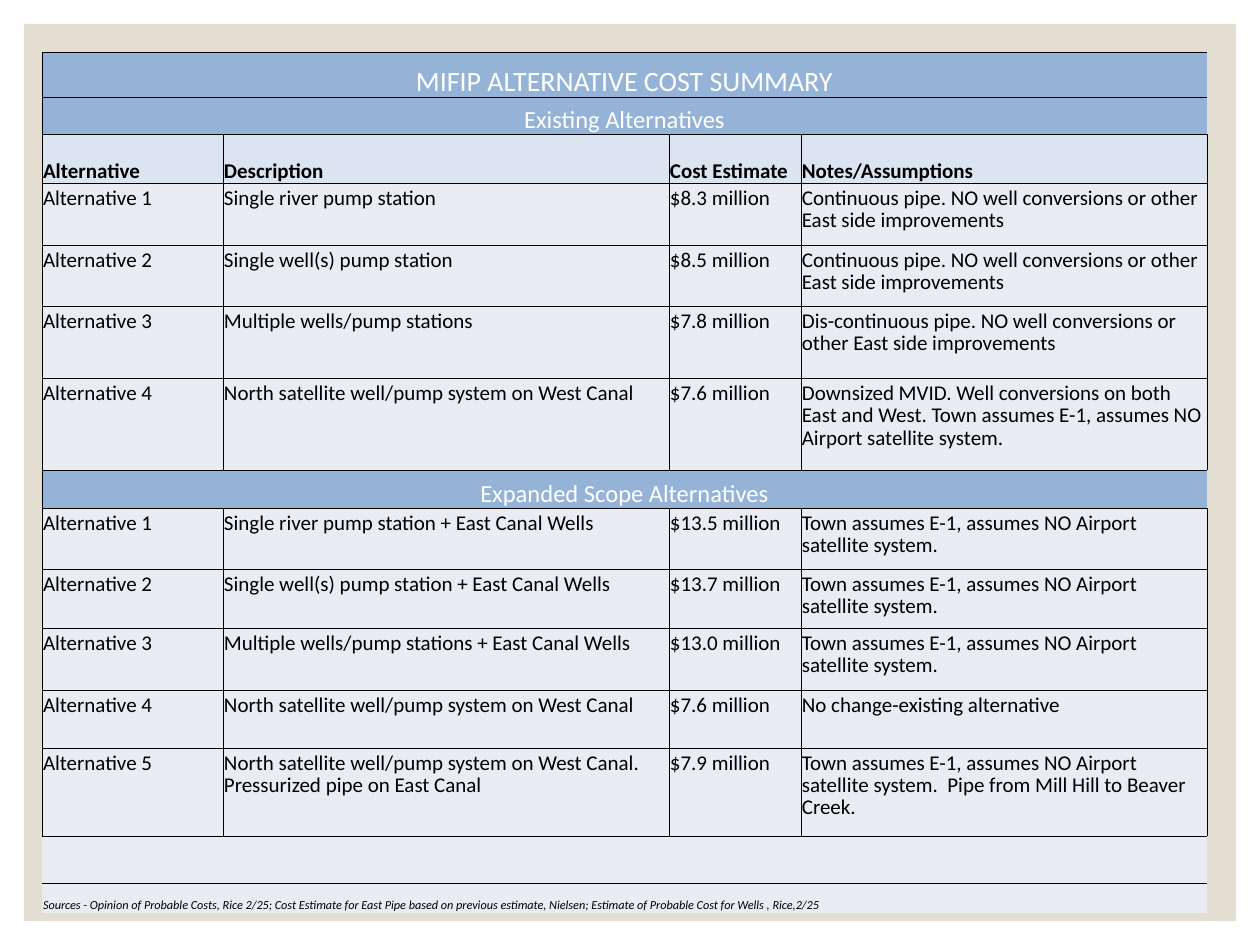
"""Build the alternative cost summary slide."""
from dataclasses import dataclass

from lxml.etree import SubElement
from pptx import Presentation
from pptx.dml.color import RGBColor
from pptx.enum.shapes import MSO_SHAPE as Shape
from pptx.enum.text import MSO_ANCHOR as Anchor, PP_ALIGN as Align
from pptx.oxml.ns import qn
from pptx.util import Inches, Pt

SCALE = Inches(10) / 1260
PLAIN_TABLE = "{2D5ABB26-0587-4C30-8999-92F81FD0307C}"
COLUMNS = [181, 446, 132, 406]


@dataclass
class Row:
    """Format shared by the cells of one table row."""
    fill: str = "E9ECF3"
    color: str = "000000"
    size: int = 12
    bold: bool = False
    italic: bool = False
    anchor: Anchor = Anchor.TOP
    align: Align = Align.LEFT
    top: int = 5
    borders: str = "LRTB"
    first: str = "LRTB"
    span: bool = False


TITLE = Row("95B3D7", "FFFFFF", 16, anchor=Anchor.BOTTOM, align=Align.CENTER,
            top=6, borders="T", first="LTB", span=True)
SECTION = Row("95B3D7", "FFFFFF", 14, anchor=Anchor.BOTTOM, align=Align.CENTER,
              borders="T", first="LTB", span=True)
HEADER = Row("DBE5F1", bold=True, anchor=Anchor.BOTTOM, borders="LRB")
BODY = Row()
BELOW_SECTION = Row(borders="LRB")
SPACER = Row(borders="T", first="T")
SOURCE = Row(size=7, italic=True, anchor=Anchor.BOTTOM, top=4,
             borders="", first="", span=True)

CONTINUOUS = "Continuous pipe. NO well conversions or other East side improvements"
TOWN = "Town assumes E-1, assumes NO Airport satellite system."
NORTH = "North satellite well/pump system on West Canal"

COST_ROWS = [
    (45, TITLE, ["MIFIP ALTERNATIVE COST SUMMARY"]),
    (37, SECTION, ["Existing Alternatives"]),
    (49, HEADER, ["Alternative", "Description", "Cost Estimate", "Notes/Assumptions"]),
    (62, BODY, ["Alternative 1", "Single river pump station", "$8.3 million", CONTINUOUS]),
    (61, BODY, ["Alternative 2", "Single well(s) pump station", "$8.5 million", CONTINUOUS]),
    (72, BODY, ["Alternative 3", "Multiple wells/pump stations", "$7.8 million",
                "Dis-continuous pipe. NO well conversions or other East side improvements"]),
    (92, BODY, ["Alternative 4", NORTH, "$7.6 million",
                "Downsized MVID. Well conversions on both East and West. "
                "Town assumes E-1, assumes NO Airport satellite system."]),
    (38, SECTION, ["Expanded Scope Alternatives"]),
    (61, BELOW_SECTION, ["Alternative 1", "Single river pump station + East Canal Wells",
                         "$13.5 million", TOWN]),
    (59, BODY, ["Alternative 2", "Single well(s) pump station + East Canal Wells",
                "$13.7 million", TOWN]),
    (62, BODY, ["Alternative 3", "Multiple wells/pump stations + East Canal Wells",
                "$13.0 million", TOWN]),
    (58, BODY, ["Alternative 4", NORTH, "$7.6 million", "No change-existing alternative"]),
    (88, BODY, ["Alternative 5", NORTH + ". Pressurized pipe on East Canal", "$7.9 million",
                TOWN + "  Pipe from Mill Hill to Beaver Creek."]),
    (47, SPACER, []),
    (30, SOURCE, ["Sources - Opinion of Probable Costs, Rice 2/25; Cost Estimate for East Pipe "
                  "based on previous estimate, Nielsen; Estimate of Probable Cost for Wells , "
                  "Rice,2/25"]),
]


def px(length):
    """Turn px into EMU."""
    return round(length * SCALE)


def rgb(value):
    """Turn a hex string into a colour."""
    return RGBColor.from_string(value)


class Page:
    """Style and current slide, with one method per kind of element."""

    font = "Calibri"
    line_color = "000000"
    line_width = Pt(0.11)
    spacing = 0.87

    def __init__(self, deck):
        """Add a blank slide to the deck."""
        self.slide = deck.slides.add_slide(deck.slide_layouts[6])

    def panel(self, left, top, width, height, color):
        """Draw a plain filled rectangle."""
        box = self.slide.shapes.add_shape(
            Shape.RECTANGLE, px(left), px(top), px(width), px(height))
        box.shadow.inherit = False
        box.fill.solid()
        box.fill.fore_color.rgb = rgb(color)
        box.line.fill.background()

    def table(self, left, top, columns, rows):
        """Draw a table from (height, format, texts) rows."""
        height = sum(row[0] for row in rows)
        table = self.slide.shapes.add_table(
            len(rows), len(columns), px(left), px(top), px(sum(columns)), px(height)).table
        table.first_row = table.horz_banding = False
        table._tbl.tblPr.find(qn("a:tableStyleId")).text = PLAIN_TABLE
        for column, width in zip(table.columns, columns):
            column.width = px(width)
        for index, (height, row, texts) in enumerate(rows):
            table.rows[index].height = px(height)
            if row.span:
                table.cell(index, 0).merge(table.cell(index, len(columns) - 1))
            for number in range(len(columns)):
                text = texts[number] if number < len(texts) else ""
                sides = row.borders if number else row.first
                self.cell(table.cell(index, number), row, text, sides)

    def cell(self, cell, row, text, sides):
        """Fill one cell and set its borders and text format."""
        self.borders(cell, sides)
        cell.fill.solid()
        cell.fill.fore_color.rgb = rgb(row.fill)
        cell.margin_left = cell.margin_right = px(1)
        cell.margin_top, cell.margin_bottom = px(row.top), 0
        cell.vertical_anchor = row.anchor
        para = cell.text_frame.paragraphs[0]
        para.text = text
        para.alignment = row.align
        para.line_spacing = self.spacing
        font = para.font
        font.name, font.size = self.font, Pt(row.size)
        font.bold, font.italic = row.bold, row.italic
        font.color.rgb = rgb(row.color)

    def borders(self, cell, sides):
        """Add a hairline on each named side of a cell."""
        properties = cell._tc.get_or_add_tcPr()
        for side in sides:
            line = SubElement(properties, qn(f"a:ln{side}"), w=str(self.line_width))
            fill = SubElement(line, qn("a:solidFill"))
            SubElement(fill, qn("a:srgbClr"), val=self.line_color)


def main():
    """Build and save the deck."""
    deck = Presentation()
    deck.slide_width, deck.slide_height = px(1260), px(945)
    page = Page(deck)
    page.panel(24, 24, 1212, 897, "E3DED1")
    page.table(42, 52, COLUMNS, COST_ROWS)
    deck.save("out.pptx")


if __name__ == "__main__":
    main()
